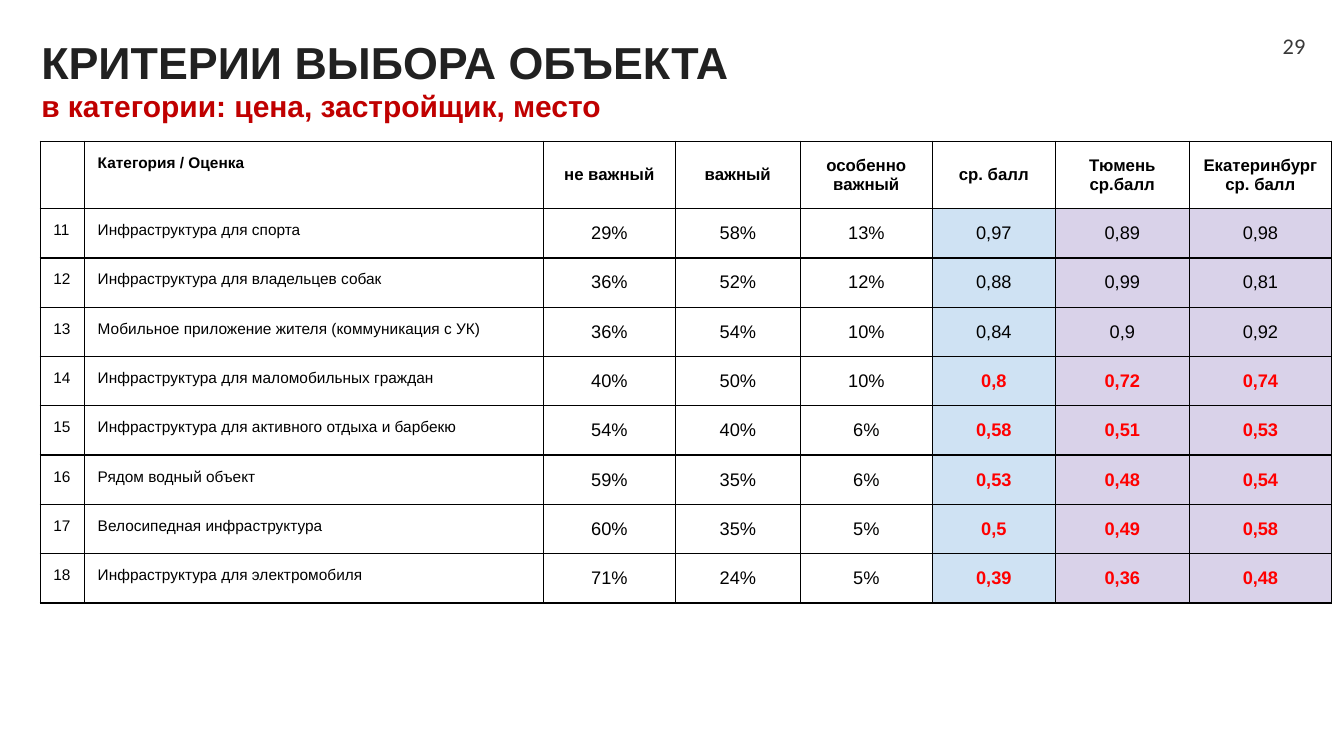
"""Build the slide on the criteria for choosing a property."""
from dataclasses import dataclass

from lxml import etree
from pptx import Presentation
from pptx import util as u
from pptx.dml.color import RGBColor
from pptx.enum import text as t
from pptx.oxml import ns
from pptx.slide import Slide
from pptx.table import _Cell
from pptx.text.text import TextFrame

GRID = u.Inches(0.1)
SLIDE_COLUMNS, SLIDE_ROWS = 133.33, 75
INSET = 1.3
INK = RGBColor(0x21, 0x21, 0x21)
CRIMSON = RGBColor(0xC0, 0x00, 0x00)
GREY = RGBColor(0x39, 0x39, 0x39)
BLACK = RGBColor(0x00, 0x00, 0x00)
WHITE = RGBColor(0xFF, 0xFF, 0xFF)
RED = RGBColor(0xFF, 0x00, 0x00)
BLUE = RGBColor(0xCF, 0xE2, 0xF3)
LILAC = RGBColor(0xD9, 0xD2, 0xE9)
LOW_SCORE = 0.8
HEADER_HEIGHT, CRITERION_HEIGHT = 6.7, 4.89


@dataclass(frozen=True)
class Column:
    heading: str
    width: float
    size: float = 13
    heading_size: float = 12
    centred: bool = True
    fill: RGBColor = WHITE
    is_score: bool = False


@dataclass(frozen=True)
class Criterion:
    number: int
    name: str
    shares: tuple[str, str, str]
    scores: tuple[str, str, str]

    @property
    def is_low(self) -> bool:
        return float(self.scores[0].replace(",", ".")) <= LOW_SCORE

    @property
    def values(self) -> tuple[str, ...]:
        return (str(self.number), self.name, *self.shares, *self.scores)


COLUMNS = [
    Column("", 4.4, size=11, heading_size=11, centred=False),
    Column("Категория / Оценка", 45.5, size=11, heading_size=11, centred=False),
    Column("не важный", 13.1),
    Column("важный", 12.4),
    Column("особенно\nважный", 13.1),
    Column("ср. балл", 12.2, fill=BLUE, is_score=True),
    Column("Тюмень\nср.балл", 13.3, fill=LILAC, is_score=True),
    Column("Екатеринбург\nср. балл", 14.1, fill=LILAC, is_score=True),
]
CRITERIA = [
    Criterion(11, "Инфраструктура для спорта", ("29%", "58%", "13%"), ("0,97", "0,89", "0,98")),
    Criterion(12, "Инфраструктура для владельцев собак", ("36%", "52%", "12%"), ("0,88", "0,99", "0,81")),
    Criterion(13, "Мобильное приложение жителя (коммуникация с УК)", ("36%", "54%", "10%"), ("0,84", "0,9", "0,92")),
    Criterion(14, "Инфраструктура для маломобильных граждан", ("40%", "50%", "10%"), ("0,8", "0,72", "0,74")),
    Criterion(15, "Инфраструктура для активного отдыха и барбекю", ("54%", "40%", "6%"), ("0,58", "0,51", "0,53")),
    Criterion(16, "Рядом водный объект", ("59%", "35%", "6%"), ("0,53", "0,48", "0,54")),
    Criterion(17, "Велосипедная инфраструктура", ("60%", "35%", "5%"), ("0,5", "0,49", "0,58")),
    Criterion(18, "Инфраструктура для электромобиля", ("71%", "24%", "5%"), ("0,39", "0,36", "0,48")),
]


def grid(cells: float) -> u.Emu:
    return u.Emu(round(cells * GRID))


def write(frame: TextFrame, words: str, *, size: float, color: RGBColor = BLACK,
          bold: bool = False, font: str = "Arial", align: t.PP_ALIGN = t.PP_ALIGN.LEFT,
          spacing: float = 1.0, append: bool = False) -> None:
    for index, line in enumerate(words.split("\n")):
        paragraph = frame.add_paragraph() if append or index else frame.paragraphs[0]
        paragraph.alignment = align
        paragraph.line_spacing = spacing
        paragraph.font.size = u.Pt(size)
        if line:
            run = paragraph.add_run()
            run.text = line
            run.font.name = font
            run.font.size = u.Pt(size)
            run.font.bold = bold
            run.font.color.rgb = color


def set_insets(holder: TextFrame | _Cell, inset: float) -> None:
    holder.margin_left = holder.margin_right = grid(inset)
    holder.margin_top = holder.margin_bottom = grid(inset)


def add_frame(slide: Slide, left: float, top: float, width: float, height: float,
              inset: float = 0) -> TextFrame:
    frame = slide.shapes.add_textbox(grid(left), grid(top), grid(width), grid(height)).text_frame
    frame.word_wrap = True
    set_insets(frame, inset)
    return frame


def draw_borders(cell: _Cell) -> None:
    properties = cell._tc.get_or_add_tcPr()
    for index, side in enumerate(("lnL", "lnR", "lnT", "lnB")):
        border = etree.Element(ns.qn(f"a:{side}"), w=str(u.Pt(1)))
        fill = etree.SubElement(border, ns.qn("a:solidFill"))
        etree.SubElement(fill, ns.qn("a:srgbClr"), val=str(BLACK))
        properties.insert(index, border)


def fill_cell(cell: _Cell, words: str, column: Column, *, size: float,
              fill: RGBColor = WHITE, color: RGBColor = BLACK, bold: bool = False) -> None:
    set_insets(cell, INSET)
    cell.vertical_anchor = t.MSO_ANCHOR.MIDDLE if column.centred else t.MSO_ANCHOR.TOP
    cell.fill.solid()
    cell.fill.fore_color.rgb = fill
    draw_borders(cell)
    align = t.PP_ALIGN.CENTER if column.centred else t.PP_ALIGN.LEFT
    write(cell.text_frame, words, size=size, color=color, bold=bold, align=align)


def add_criteria_table(slide: Slide, left: float, top: float) -> None:
    width = sum(column.width for column in COLUMNS)
    height = HEADER_HEIGHT + CRITERION_HEIGHT * len(CRITERIA)
    ratings = slide.shapes.add_table(len(CRITERIA) + 1, len(COLUMNS), grid(left), grid(top),
                                     grid(width), grid(height)).table
    for row in ratings.rows:
        row.height = grid(CRITERION_HEIGHT)
    ratings.rows[0].height = grid(HEADER_HEIGHT)
    for x, column in enumerate(COLUMNS):
        ratings.columns[x].width = grid(column.width)
        fill_cell(ratings.cell(0, x), column.heading, column, size=column.heading_size, bold=True)
        for y, criterion in enumerate(CRITERIA, start=1):
            low = column.is_score and criterion.is_low
            fill_cell(ratings.cell(y, x), criterion.values[x], column, size=column.size,
                      fill=column.fill, color=RED if low else BLACK, bold=low)


def main() -> None:
    deck = Presentation()
    deck.slide_width, deck.slide_height = grid(SLIDE_COLUMNS), grid(SLIDE_ROWS)
    slide = deck.slides.add_slide(deck.slide_layouts[6])

    title = add_frame(slide, 2.8, 2.1, 121.4, 9.7, inset=INSET)
    write(title, "КРИТЕРИИ ВЫБОРА ОБЪЕКТА", size=32, color=INK, bold=True)
    write(title, "в категории: цена, застройщик, место", size=21.4, color=CRIMSON,
          bold=True, append=True)

    add_criteria_table(slide, 4, 14)

    page_number = add_frame(slide, 123.9, 2.6, 5.6, 4.1)
    page_number.vertical_anchor = t.MSO_ANCHOR.MIDDLE
    write(page_number, "29", size=16, color=GREY, font="Calibri",
          align=t.PP_ALIGN.RIGHT, spacing=0.9)
    deck.save("out.pptx")


if __name__ == "__main__":
    main()
